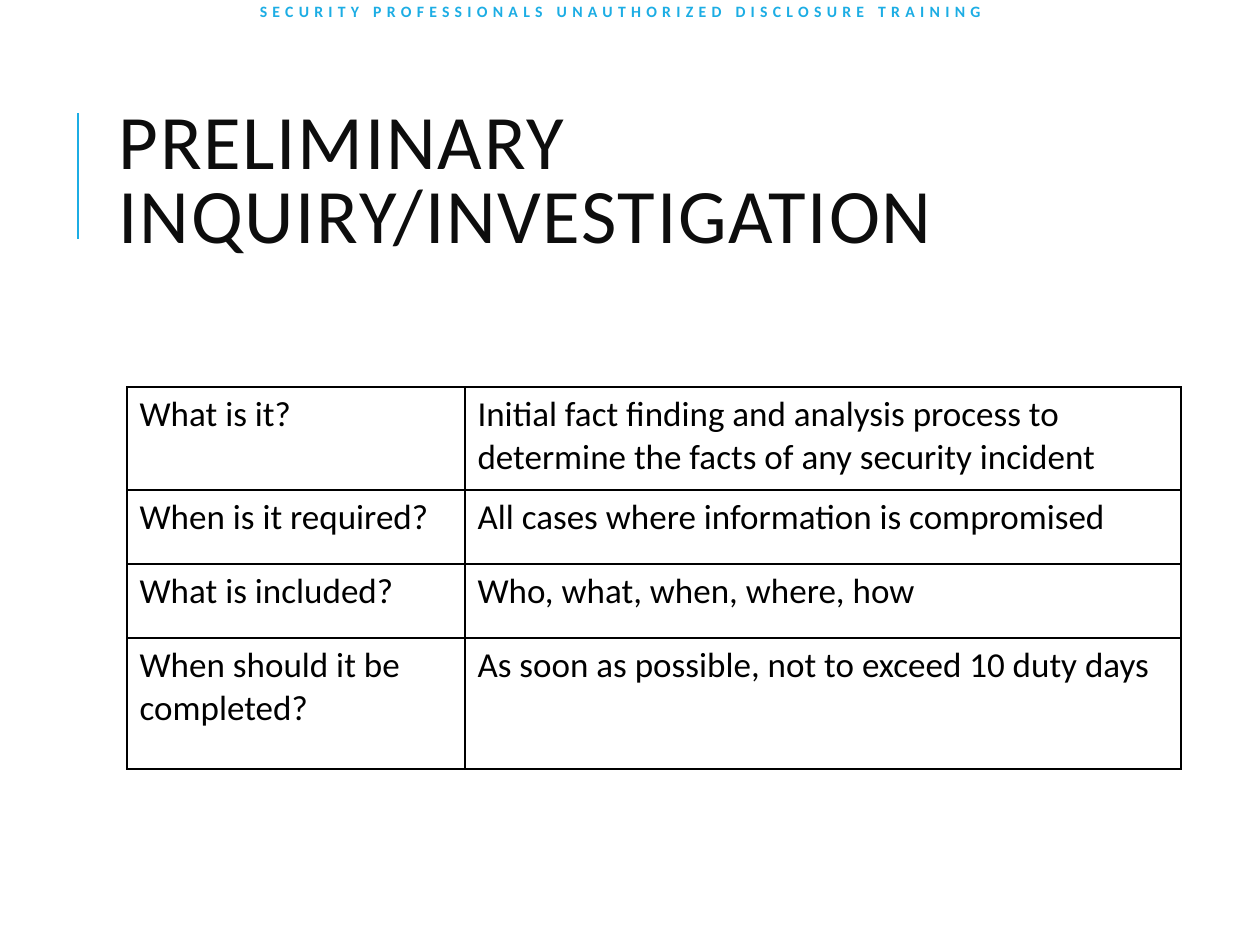
from dataclasses import dataclass

from lxml import etree
from pptx import Presentation
from pptx import util as u
from pptx.dml.color import RGBColor
from pptx.enum import shapes, text
from pptx.oxml.ns import qn

SCALE = 914400 / 126  # EMU in one px
FONT = "Calibri"
COLORS = {"accent": "1CADE4", "title": "0D0D0D", "text": "000000", "border": "000000"}


@dataclass(frozen=True)
class Box:
    left: int
    top: int
    width: int
    height: int


@dataclass(frozen=True)
class Row:
    height: int
    question: str
    answer: str


HEADER_BOX = Box(32, 0, 1176, 21)
TITLE_BOX = Box(106, 81, 1004, 207)
TABLE_LEFT, TABLE_TOP = 127, 387
COLUMN_WIDTHS = (338, 716)
ROWS = (
    Row(103, "What is it?",
        "Initial fact finding and analysis process to determine the facts of any security incident"),
    Row(74, "When is it required?", "All cases where information is compromised"),
    Row(74, "What is included?", "Who, what, when, where, how"),
    Row(131, "When should it be completed?", "As soon as possible, not to exceed 10 duty days"),
)


def px(length: int) -> u.Emu:
    return u.Emu(round(length * SCALE))


def place(shape, box: Box) -> None:
    shape.left, shape.top = px(box.left), px(box.top)
    shape.width, shape.height = px(box.width), px(box.height)


def write(frame, content: str, *, size: int, color: str, bold: bool = False,
          tracking: int = 0, align=text.PP_ALIGN.LEFT, line_spacing: float = 1.0) -> None:
    """Fill a text frame with one paragraph; tracking is in points."""
    paragraph = frame.paragraphs[0]
    paragraph.alignment = align
    paragraph.line_spacing = line_spacing
    run = paragraph.add_run()
    run.text = content
    run.font.name = FONT
    run.font.size = u.Pt(size)
    run.font.bold = bold
    run.font.color.rgb = RGBColor.from_string(COLORS[color])
    if tracking:
        run.font._element.set("spc", str(tracking * 100))


def add_header(slide) -> None:
    shape = slide.shapes.add_textbox(0, 0, 0, 0)
    place(shape, HEADER_BOX)
    frame = shape.text_frame
    frame.word_wrap = True
    frame.vertical_anchor = text.MSO_ANCHOR.BOTTOM
    frame.margin_left = frame.margin_right = frame.margin_top = frame.margin_bottom = 0
    write(frame, "SECURITY PROFESSIONALS UNAUTHORIZED DISCLOSURE TRAINING", size=9,
          color="accent", bold=True, tracking=3, align=text.PP_ALIGN.CENTER)


def add_title_rule(slide) -> None:
    connector = slide.shapes.add_connector(
        shapes.MSO_CONNECTOR.STRAIGHT, px(78), px(239), px(78), px(113))
    connector.line.color.rgb = RGBColor.from_string(COLORS["accent"])
    connector.line.width = u.Pt(1.5)
    etree.SubElement(connector._element.spPr, qn("a:effectLst"))


def format_title(slide) -> None:
    title = slide.shapes.title
    place(title, TITLE_BOX)
    frame = title.text_frame
    frame.word_wrap = True
    frame.auto_size = text.MSO_AUTO_SIZE.NONE
    frame.vertical_anchor = text.MSO_ANCHOR.MIDDLE
    write(frame, "PRELIMINARY INQUIRY/INVESTIGATION", size=44, color="title",
          tracking=1, line_spacing=0.8)


def set_borders(cell) -> None:
    properties = cell._tc.get_or_add_tcPr()
    for index, side in enumerate(("lnL", "lnR", "lnT", "lnB")):
        line = etree.Element(qn(f"a:{side}"), w=str(u.Pt(1)))
        fill = etree.SubElement(line, qn("a:solidFill"))
        etree.SubElement(fill, qn("a:srgbClr"), val=COLORS["border"])
        properties.insert(index, line)


def add_question_table(slide) -> None:
    height = sum(row.height for row in ROWS)
    table = slide.shapes.add_table(
        len(ROWS), len(COLUMN_WIDTHS), px(TABLE_LEFT), px(TABLE_TOP),
        px(sum(COLUMN_WIDTHS)), px(height)).table
    table.first_row = table.horz_banding = False
    for column, width in zip(table.columns, COLUMN_WIDTHS):
        column.width = px(width)
    for table_row, row in zip(table.rows, ROWS):
        table_row.height = px(row.height)
        for cell, content in zip(table_row.cells, (row.question, row.answer)):
            cell.fill.background()
            set_borders(cell)
            write(cell.text_frame, content, size=20, color="text")


def main() -> None:
    presentation = Presentation()
    presentation.slide_width, presentation.slide_height = px(1260), px(945)
    slide = presentation.slides.add_slide(presentation.slide_layouts[5])
    add_title_rule(slide)
    add_header(slide)
    format_title(slide)
    add_question_table(slide)
    presentation.save("out.pptx")


if __name__ == "__main__":
    main()
